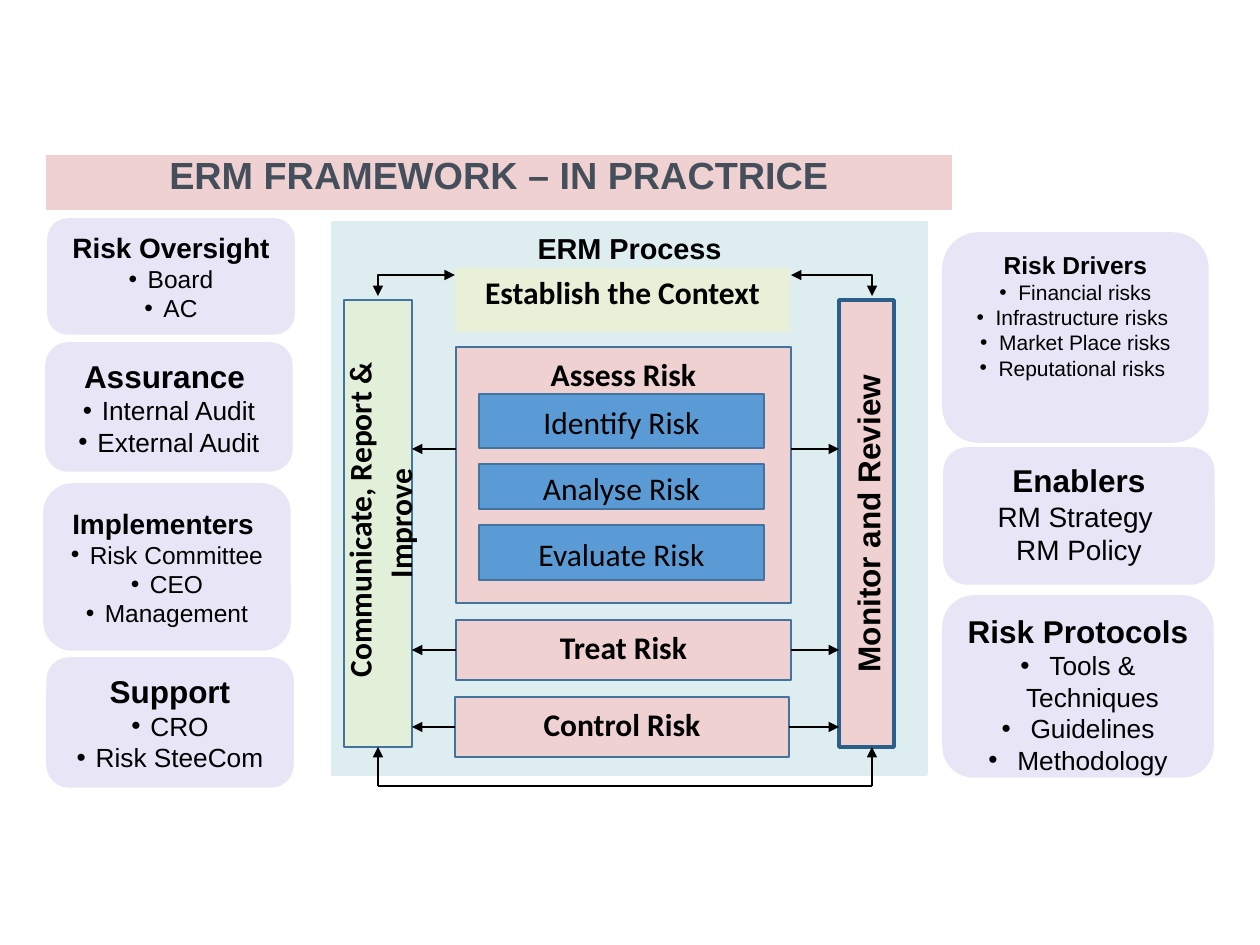
from dataclasses import dataclass

from lxml.etree import SubElement
from pptx import Presentation
from pptx.dml.color import RGBColor
from pptx.enum.shapes import MSO_CONNECTOR, MSO_SHAPE
from pptx.enum.text import MSO_ANCHOR, PP_ALIGN
from pptx.oxml.ns import qn
from pptx.util import Emu, Pt


@dataclass(frozen=True)
class Theme:
    """Colours, fonts and type sizes of the slide."""
    ink: str = "000000"
    title: str = "454F5B"
    rose: str = "EFD1D1"
    panel: str = "DDEDF0"
    lilac: str = "E8E6F6"
    lime: str = "E8F0D8"
    green: str = "E2F0D9"
    blue: str = "5B9BD5"
    edge: str = "43739E"
    dark_edge: str = "2B5F8A"
    sans: str = "Arial"
    label: str = "Calibri"
    title_size: float = 21.6
    panel_size: float = 16.5
    label_size: float = 18


T = Theme()
TOP, MIDDLE, BOTTOM = MSO_ANCHOR.TOP, MSO_ANCHOR.MIDDLE, MSO_ANCHOR.BOTTOM


def px(n):
    """Turn pixels into EMU."""
    return Emu(round(n * 914400 / 126))


def write(p, text, size, font=T.sans, color=T.ink, bold=False, bullet=0, spacing=None):
    """Fill one centred paragraph, with a hanging bullet if an indent is given."""
    p.alignment = PP_ALIGN.CENTER
    p.line_spacing = spacing
    r = p.add_run()
    r.text = text
    r.font.size, r.font.name, r.font.bold = Pt(size), font, bold
    r.font.color.rgb = RGBColor.from_string(color)
    if bullet:
        pPr = p._p.get_or_add_pPr()
        pPr.set("marL", str(px(bullet)))
        pPr.set("indent", str(-px(bullet)))
        SubElement(pPr, qn("a:buFont"), typeface="Arial")
        SubElement(pPr, qn("a:buChar"), char="•")


def block(s, box, fill, line=None, width=1, kind=MSO_SHAPE.RECTANGLE, anchor=TOP, inset=(9, 5)):
    """Add a filled shape that is ready for text."""
    sp = s.shapes.add_shape(kind, *map(px, box))
    sp.shadow.inherit = False
    sp.fill.solid()
    sp.fill.fore_color.rgb = RGBColor.from_string(fill)
    if line:
        sp.line.color.rgb = RGBColor.from_string(line)
        sp.line.width = Pt(width)
    else:
        sp.line.fill.background()
    tf = sp.text_frame
    tf.word_wrap, tf.vertical_anchor = True, anchor
    tf.margin_left = tf.margin_right = px(inset[0])
    tf.margin_top = tf.margin_bottom = px(inset[1])
    return sp


def arrow(s, start, end, kind=MSO_CONNECTOR.STRAIGHT, ends=("tailEnd",)):
    """Add a black connector with triangles at the given ends."""
    c = s.shapes.add_connector(kind, *map(px, (*start, *end)))
    c.line.color.rgb = RGBColor.from_string(T.ink)
    c.line.width = Pt(1.5)
    spPr = c._element.spPr
    ln = spPr.find(qn("a:ln"))
    for e in ends:
        SubElement(ln, qn(f"a:{e}"), type="triangle")
    SubElement(spPr, qn("a:effectLst"))
    if kind == MSO_CONNECTOR.ELBOW:
        av = spPr.find(qn("a:prstGeom")).get_or_add_avLst()
        SubElement(av, qn("a:gd"), name="adj1", fmla="val 100000")
    return c


def title_bar(s, box):
    """Draw the title strip."""
    sp = block(s, box, T.rose, anchor=BOTTOM, inset=(13, 13))
    write(sp.text_frame.paragraphs[0], "ERM FRAMEWORK – IN PRACTRICE", T.title_size,
          color=T.title, bold=True)


def card(s, box, heading, size, items, item_size, bullet=19, anchor=MIDDLE):
    """Draw a rounded card with a heading and its items."""
    sp = block(s, box, T.lilac, T.lilac, 2, MSO_SHAPE.ROUNDED_RECTANGLE, anchor, (13, 6))
    tf = sp.text_frame
    write(tf.paragraphs[0], heading, size, bold=True)
    for item in items:
        write(tf.add_paragraph(), item, item_size, bullet=bullet)


def process(s, box):
    """Draw the process panel with its steps, side bars and arrows."""
    x0, y0, _, _ = box

    def at(x, y):
        return x0 + x, y0 + y

    def step(text, x, y, w, h, fill, line=T.edge, width=1, anchor=TOP, bold=True,
             font=T.label, size=T.label_size, spacing=1.07, vertical=False):
        sp = block(s, (*at(x, y), w, h), fill, line, width, anchor=anchor)
        if vertical:
            sp.text_frame._txBody.bodyPr.set("vert", "vert270")
        write(sp.text_frame.paragraphs[0], text, size, font, bold=bold, spacing=spacing)
        return sp

    step("ERM Process", 0, 0, *box[2:], T.panel, T.panel, 2, font=T.sans, size=T.panel_size)
    step("Monitor and Review", 506, 77, 55, 447, T.rose, T.dark_edge, 2, MIDDLE,
         font=T.sans, vertical=True)
    communicate = step(" Communicate, Report & Improve", 11, 77, 68, 447, T.green,
                       anchor=MIDDLE, vertical=True)
    step("Establish the Context", 122, 45, 335, 64, T.lime, T.lime, 0.5, spacing=None)
    step("Assess Risk", 123, 124, 335, 256, T.rose)
    for text, y, h in (("Identify Risk", 171, 54), ("Analyse Risk", 241, 45),
                       ("Evaluate Risk", 302, 55)):
        step(text, 146, y, 285, h, T.blue, anchor=MIDDLE, bold=False)
    treat = step("Treat Risk", 123, 397, 335, 60, T.rose)
    control = step("Control Risk", 122, 474, 334, 60, T.rose)

    for source, y in ((None, 226), (treat, 427), (control, 504)):
        for site, x1, x2 in ((1, 123, 79), (3, 458, 506)):
            c = arrow(s, at(x1, y), at(x2, y))
            if source:
                c.begin_connect(source, site)

    left, right, base = 45, 539, 563
    for x1, x2 in ((122, left), (458, right)):
        arrow(s, at(x1, 52), at(x2, 73), MSO_CONNECTOR.ELBOW, ("headEnd", "tailEnd"))
    arrow(s, at(left, base), at(left, 524)).end_connect(communicate, 2)
    arrow(s, at(right, base), at(right, 524))
    arrow(s, at(left, base), at(right, base), ends=())


def main():
    """Build the slide and save it."""
    prs = Presentation()
    prs.slide_width, prs.slide_height = px(1260), px(945)
    s = prs.slides.add_slide(prs.slide_layouts[6])
    title_bar(s, (46, 155, 906, 55))
    process(s, (333, 223, 593, 551))
    card(s, (49, 220, 244, 113), "Risk Oversight", 16, ("Board", "AC"), 14)
    card(s, (47, 344, 244, 126), "Assurance ", 18, ("Internal Audit", "External Audit"), 15)
    card(s, (45, 485, 244, 164), "Implementers ", 16,
         ("Risk Committee", "CEO", "Management"), 14)
    card(s, (48, 659, 244, 127), "Support", 18, ("CRO", "Risk SteeCom"), 15)
    card(s, (944, 234, 263, 207), "Risk Drivers", 14,
         ("Financial risks", "Infrastructure risks ", "Market Place risks",
          "Reputational risks "), 12, anchor=TOP)
    card(s, (945, 449, 268, 134), "Enablers", 18, ("RM Strategy ", "RM Policy"), 16,
         bullet=0, anchor=TOP)
    card(s, (944, 597, 268, 179), "Risk Protocols ", 18,
         ("Tools & Techniques", "Guidelines", "Methodology"), 15, bullet=29, anchor=TOP)
    prs.save("out.pptx")


if __name__ == "__main__":
    main()
